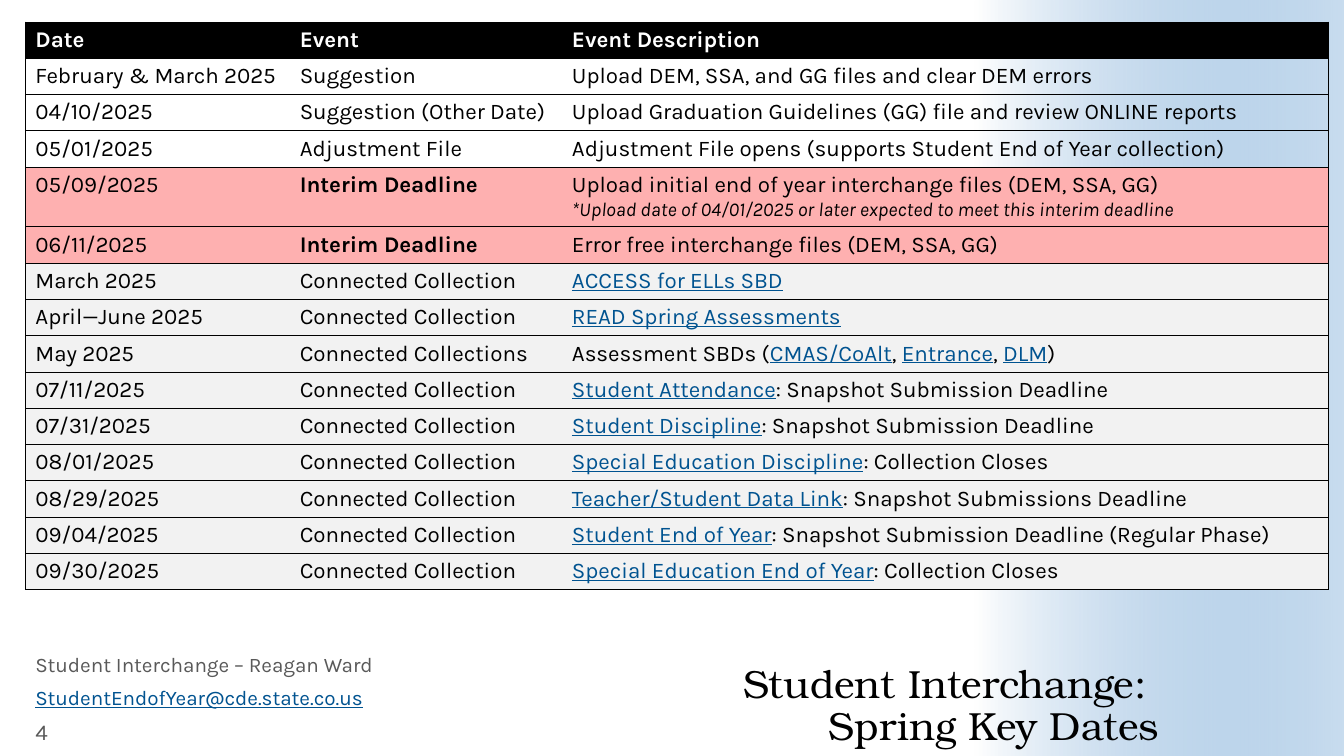
import dataclasses

import lxml.etree
import pptx
import pptx.dml.color
import pptx.enum.shapes
import pptx.enum.text
import pptx.oxml.ns
import pptx.slide
import pptx.table
import pptx.text.text
import pptx.util

Cm = pptx.util.Cm
Pt = pptx.util.Pt
qn = pptx.oxml.ns.qn
Align = pptx.enum.text.PP_ALIGN
Anchor = pptx.enum.text.MSO_ANCHOR

BLACK, WHITE, GREY, LINK_BLUE = "000000", "FFFFFF", "595959", "005390"
DEADLINE_PINK, COLLECTION_GREY = "FEB0B0", "F2F2F2"


@dataclasses.dataclass(frozen=True)
class KeyDate:
    """A table row; link words in the description stand in [brackets]."""
    date: str
    event: str
    description: str
    fill: str = ""
    note: str = ""
    header: bool = False
    bold_event: bool = False


@dataclasses.dataclass(frozen=True)
class Caption:
    text: str
    left: float
    top: float
    width: float
    height: float
    size: float
    color: str = GREY
    font: str = "Karla"
    align: Align = Align.LEFT
    anchor: Anchor = Anchor.TOP
    spacing: float = 1.0
    inset: bool = True


def deadline(date: str, description: str, note: str = "") -> KeyDate:
    return KeyDate(date, "Interim Deadline", description, DEADLINE_PINK, note, bold_event=True)


def collection(date: str, description: str, event: str = "Connected Collection") -> KeyDate:
    return KeyDate(date, event, description, COLLECTION_GREY)


KEY_DATES = [
    KeyDate("Date", "Event", "Event Description", BLACK, header=True),
    KeyDate("February & March 2025", "Suggestion",
            "Upload DEM, SSA, and GG files and clear DEM errors"),
    KeyDate("04/10/2025", "Suggestion (Other Date)",
            "Upload Graduation Guidelines (GG) file and review ONLINE reports"),
    KeyDate("05/01/2025", "Adjustment File",
            "Adjustment File opens (supports Student End of Year collection)"),
    deadline("05/09/2025", "Upload initial end of year interchange files (DEM, SSA, GG)",
             "*Upload date of 04/01/2025 or later expected to meet this interim deadline"),
    deadline("06/11/2025", "Error free interchange files (DEM, SSA, GG)"),
    collection("March 2025", "[ACCESS for ELLs SBD]"),
    collection("April—June 2025", "[READ Spring Assessments]"),
    collection("May 2025", "Assessment SBDs ([CMAS/CoAlt], [Entrance], [DLM])",
               "Connected Collections"),
    collection("07/11/2025", "[Student Attendance]: Snapshot Submission Deadline"),
    collection("07/31/2025", "[Student Discipline]: Snapshot Submission Deadline"),
    collection("08/01/2025", "[Special Education Discipline]: Collection Closes"),
    collection("08/29/2025", "[Teacher/Student Data Link]: Snapshot Submissions Deadline"),
    collection("09/04/2025",
               "[Student End of Year]: Snapshot Submission Deadline (Regular Phase)"),
    collection("09/30/2025", "[Special Education End of Year]: Collection Closes"),
]
COLUMN_WIDTHS = (6.66, 6.86, 19.32)
ROW_HEIGHT, NOTE_ROW_HEIGHT = 0.91, 1.5

CAPTIONS = [
    Caption("Student Interchange: \vSpring Key Dates", 10.82, 16.38, 18.39, 2.49, 28, BLACK,
            "TeX Gyre Bonum", Align.RIGHT, Anchor.BOTTOM, 0.9, inset=False),
    Caption("Student Interchange – Reagan Ward", 0.64, 16.43, 9.88, 0.8, 14.8, spacing=0.8),
    Caption("[StudentEndofYear@cde.state.co.us]", 0.64, 17.25, 9.88, 0.8, 14.8, spacing=0.8),
    Caption("4", 0.64, 18.03, 2.16, 0.8, 16, anchor=Anchor.MIDDLE),
]


def rgb(color: str) -> pptx.dml.color.RGBColor:
    return pptx.dml.color.RGBColor.from_string(color)


def write(paragraph: pptx.text.text._Paragraph, text: str, size: float, color: str = BLACK,
          font: str = "Karla", bold: bool = False, italic: bool = False) -> None:
    """Fill a paragraph, showing the words in [brackets] as links."""
    pieces = text.replace("]", "[").split("[")
    paragraph.text = pieces[0]
    for piece in pieces[1:]:
        if piece:
            paragraph.add_run().text = piece
    links = set(pieces[1::2])
    for run in paragraph.runs:
        is_link = run.text in links
        run.font.name, run.font.size = font, Pt(size)
        run.font.bold, run.font.italic, run.font.underline = bold, italic, is_link
        run.font.color.rgb = rgb(LINK_BLUE if is_link else color)


def set_borders(cell: pptx.table._Cell, drawn: dict[str, bool]) -> None:
    properties = cell._tc.get_or_add_tcPr()
    for side, shown in drawn.items():
        line = lxml.etree.SubElement(properties, qn(f"a:ln{side}"), w=str(Pt(0.5)))
        if shown:
            solid = lxml.etree.SubElement(line, qn("a:solidFill"))
            lxml.etree.SubElement(solid, qn("a:srgbClr"), val=BLACK)
        else:
            lxml.etree.SubElement(line, qn("a:noFill"))


def draw_backdrop(slide: pptx.slide.Slide) -> None:
    backdrop = slide.shapes.add_shape(pptx.enum.shapes.MSO_SHAPE.RECTANGLE,
                                      Cm(19.69), Cm(4.88), Cm(19.05), Cm(9.3))
    backdrop.rotation = 270
    backdrop.shadow.inherit = False
    backdrop.line.fill.background()
    backdrop.fill.gradient()
    backdrop.fill.gradient_angle = 270
    for stop, color in zip(backdrop.fill.gradient_stops, (WHITE, "488BC9")):
        stop.color.rgb = rgb(color)
    blue = list(backdrop._element.iter(qn("a:srgbClr")))[-1]
    lxml.etree.SubElement(blue, qn("a:alpha"), val="30000")


def draw_key_dates(slide: pptx.slide.Slide) -> None:
    heights = [NOTE_ROW_HEIGHT if entry.note else ROW_HEIGHT for entry in KEY_DATES]
    schedule = slide.shapes.add_table(len(KEY_DATES), len(COLUMN_WIDTHS), Cm(0.64), Cm(0.55),
                                      Cm(sum(COLUMN_WIDTHS)), Cm(sum(heights))).table
    schedule.horz_banding = False
    schedule.first_row = False
    for column, width in zip(schedule.columns, COLUMN_WIDTHS):
        column.width = Cm(width)
    last = len(COLUMN_WIDTHS) - 1
    for row, height, entry in zip(schedule.rows, heights, KEY_DATES):
        row.height = Cm(height)
        for index, text in enumerate((entry.date, entry.event, entry.description)):
            cell = row.cells[index]
            set_borders(cell, {"L": index == 0, "R": index == last, "T": True, "B": True})
            if entry.fill:
                cell.fill.solid()
                cell.fill.fore_color.rgb = rgb(entry.fill)
            else:
                cell.fill.background()
            write(cell.text_frame.paragraphs[0], text, 16, WHITE if entry.header else BLACK,
                  bold=entry.header or (entry.bold_event and index == 1))
            if entry.note and index == last:
                write(cell.text_frame.add_paragraph(), entry.note, 14, italic=True)


def draw_caption(slide: pptx.slide.Slide, caption: Caption) -> None:
    frame = slide.shapes.add_textbox(Cm(caption.left), Cm(caption.top),
                                     Cm(caption.width), Cm(caption.height)).text_frame
    frame.word_wrap = True
    frame.vertical_anchor = caption.anchor
    if not caption.inset:
        frame.margin_left = frame.margin_right = frame.margin_top = frame.margin_bottom = 0
    paragraph = frame.paragraphs[0]
    paragraph.alignment = caption.align
    paragraph.line_spacing = caption.spacing
    write(paragraph, caption.text, caption.size, caption.color, caption.font)


def main() -> None:
    presentation = pptx.Presentation()
    presentation.slide_width, presentation.slide_height = Cm(33.87), Cm(19.05)
    slide = presentation.slides.add_slide(presentation.slide_layouts[6])

    # Backdrop, then the schedule, then title and footer
    draw_backdrop(slide)
    draw_key_dates(slide)
    for caption in CAPTIONS:
        draw_caption(slide, caption)

    presentation.save("out.pptx")


if __name__ == "__main__":
    main()
